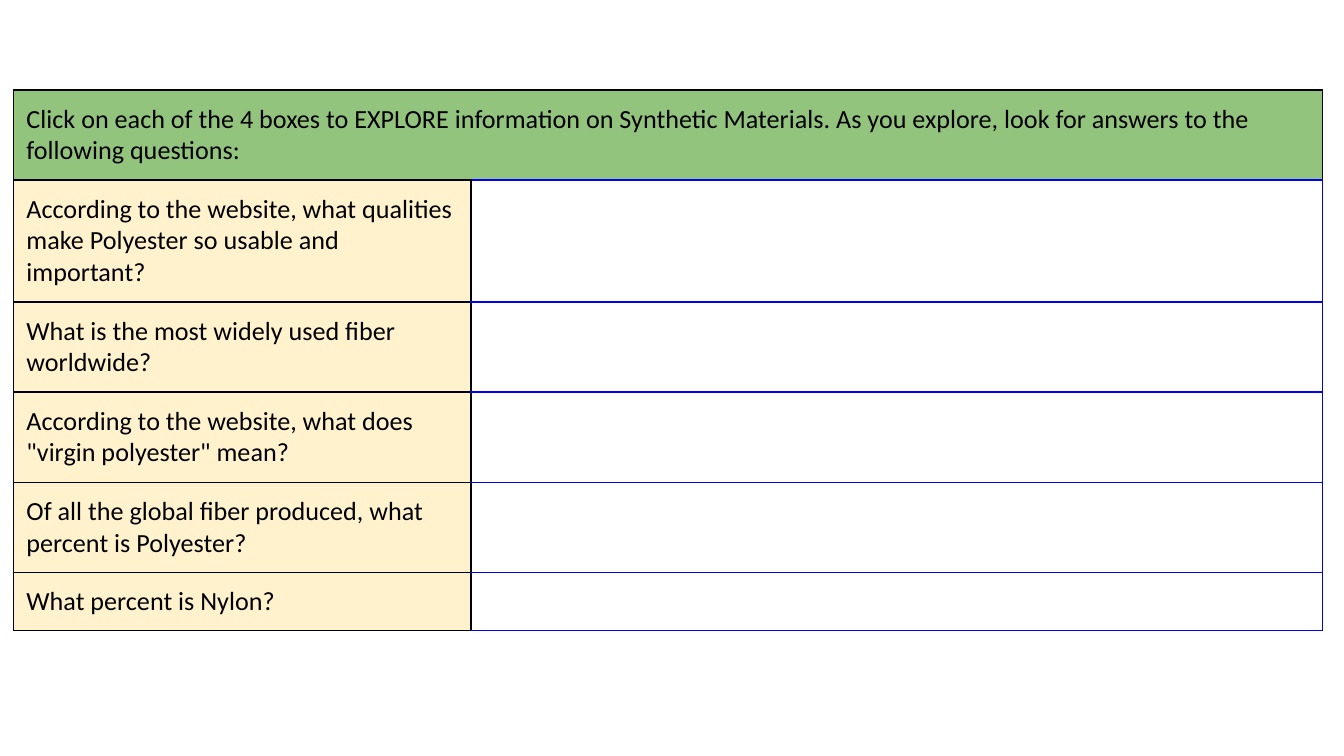
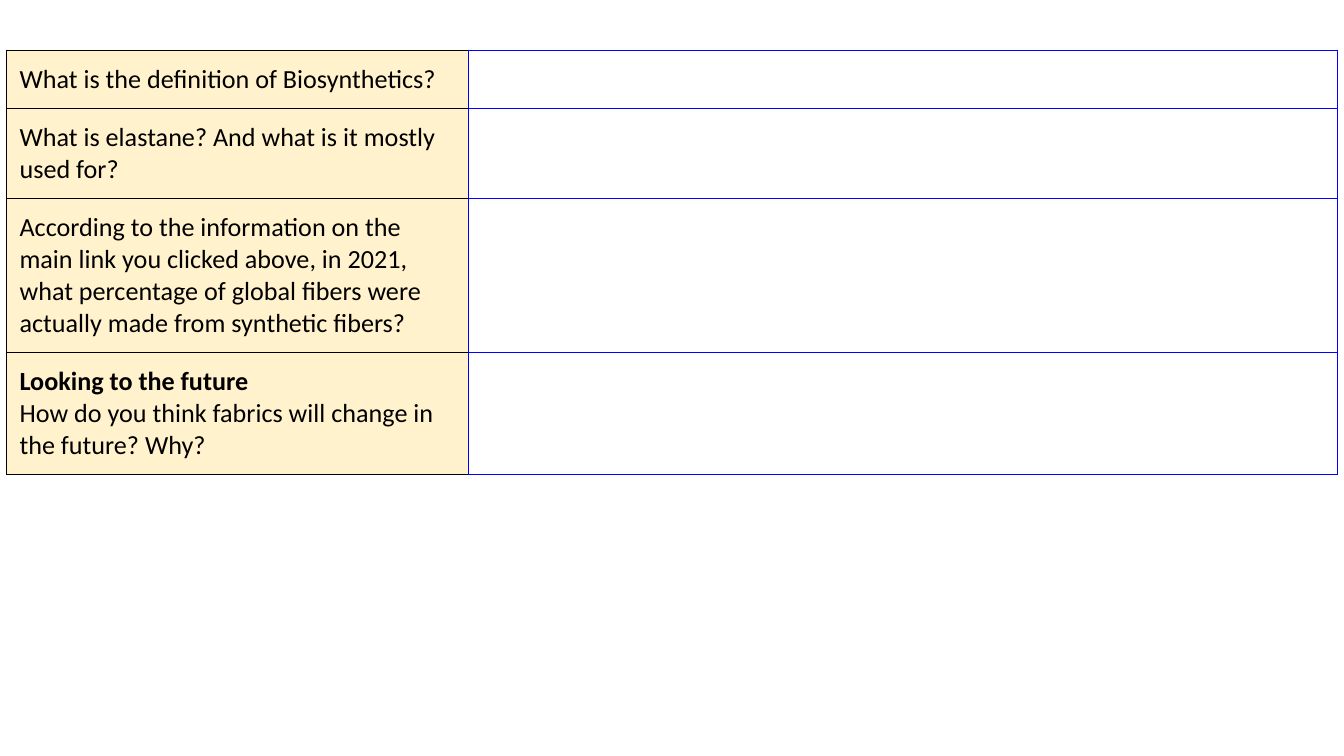
from dataclasses import dataclass

from lxml import etree
from pptx import Presentation
from pptx.dml.color import RGBColor
from pptx.oxml.ns import qn
from pptx.util import Cm, Pt


@dataclass(frozen=True)
class Theme:
    font: str = "Calibri"
    size: float = 14
    line: float = 0.75
    ink: str = "000000"
    blue: str = "0000FF"
    head: str = "93C47D"
    ask: str = "FFF2CC"


THEME = Theme()
BLANK = 6
PAD = 0.25
STEP = 0.6
SIDES = ("L", "R", "T", "B")

HEAD = ("Click on each of the 4 boxes to EXPLORE information on Synthetic "
        "Materials. As you explore, look for answers to the following questions:")
FIBERS = [
    (3, ["According to the website, what qualities make Polyester so usable and important?"]),
    (2, ["What is the most widely used fiber worldwide?"]),
    (2, ['According to the website, what does "virgin polyester" mean?']),
    (2, ["Of all the global fiber produced, what percent is Polyester?"]),
    (1, ["What percent is Nylon?"]),
]
FUTURE = [
    (1, ["What is the definition of Biosynthetics?"]),
    (2, ["What is elastane? And what is it mostly used for?"]),
    (4, ["According to the information on the main link you clicked above, in 2021, "
         "what percentage of global fibers were actually made from synthetic fibers?"]),
    (3, ["Looking to the future",
         "How do you think fabrics will change in the future? Why?"]),
]


def set_edges(cell, color, **other):
    props = cell._tc.get_or_add_tcPr()
    for spot, side in enumerate(SIDES):
        line = etree.Element(qn(f"a:ln{side}"), w=str(Pt(THEME.line)))
        fill = etree.SubElement(line, qn("a:solidFill"))
        etree.SubElement(fill, qn("a:srgbClr"), val=other.get(side, color))
        props.insert(spot, line)


def fill_cell(cell, texts, fill=None):
    cell.margin_left = cell.margin_right = Cm(PAD)
    cell.margin_top = cell.margin_bottom = Cm(PAD)
    if fill:
        cell.fill.solid()
        cell.fill.fore_color.rgb = RGBColor.from_string(fill)
    else:
        cell.fill.background()
    cell.text_frame.text = "\n".join(texts)
    for spot, para in enumerate(cell.text_frame.paragraphs):
        para.font.name = THEME.font
        para.font.size = Pt(THEME.size)
        para.font.color.rgb = RGBColor.from_string(THEME.ink)
        para.font.bold = len(texts) > 1 and spot == 0


def add_sheet(deck, left, top, widths, asks, split, head=None):
    slide = deck.slides.add_slide(deck.slide_layouts[BLANK])
    rows = ([(2, [head])] if head else []) + asks
    highs = [2 * PAD + STEP * count for count, _ in rows]
    table = slide.shapes.add_table(
        len(rows), len(widths), Cm(left), Cm(top),
        Cm(sum(widths)), Cm(sum(highs))).table
    table.first_row = table.horz_banding = False
    for col, width in zip(table.columns, widths):
        col.width = Cm(width)
    for spot, (high, (_, texts)) in enumerate(zip(highs, rows)):
        table.rows[spot].height = Cm(high)
        ask, answer = table.cell(spot, 0), table.cell(spot, 1)
        title = bool(head) and spot == 0
        fill_cell(ask, texts, THEME.head if title else THEME.ask)
        fill_cell(answer, [])
        if title:
            ask.merge(answer)
            set_edges(ask, THEME.ink)
            set_edges(answer, THEME.ink)
        else:
            set_edges(ask, THEME.ink, R=split)
            set_edges(answer, THEME.blue, L=split)


def main():
    deck = Presentation()
    deck.slide_width, deck.slide_height = Cm(25.4), Cm(14.29)
    add_sheet(deck, 0.25, 1.7, (8.65, 16.09), FIBERS, THEME.ink, HEAD)
    add_sheet(deck, 0.12, 0.95, (8.74, 16.42), FUTURE, THEME.blue)
    deck.save("out.pptx")


if __name__ == "__main__":
    main()
